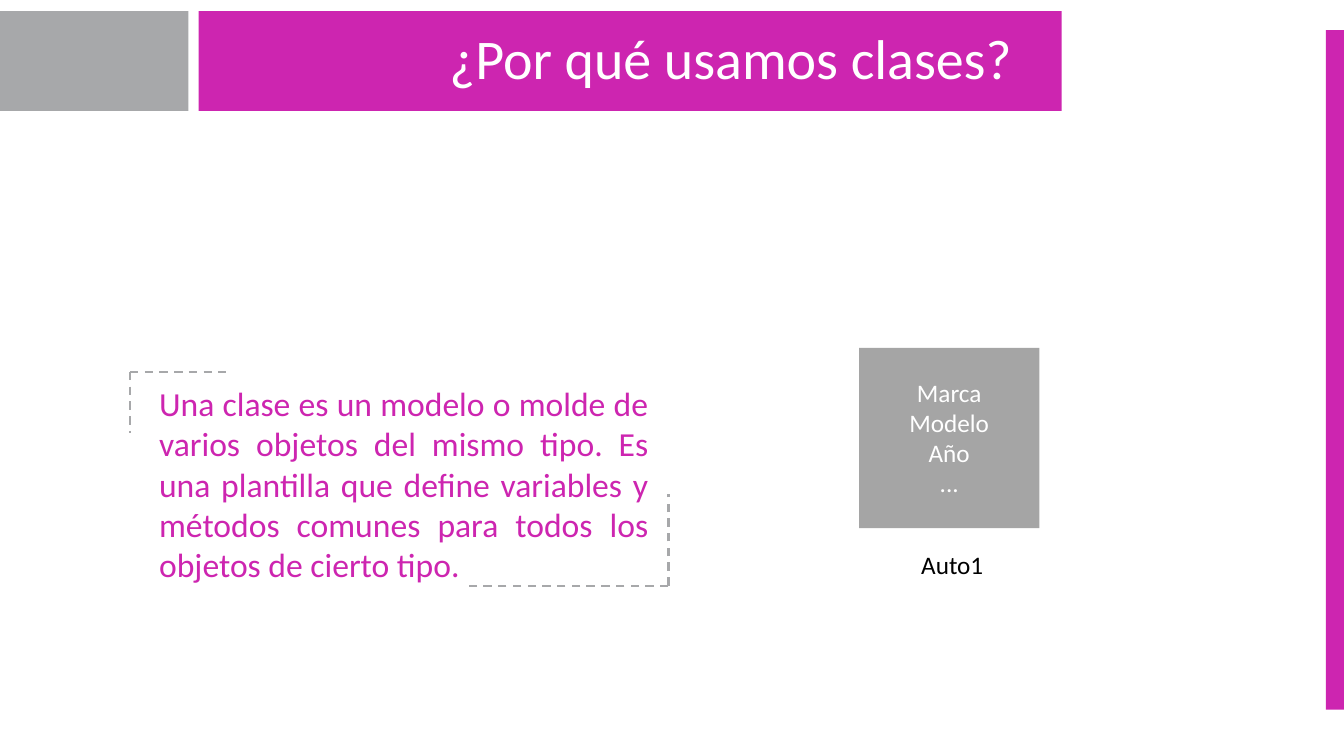
from pptx import Presentation
from pptx.dml.color import RGBColor
from pptx.enum.dml import MSO_LINE
from pptx.enum.shapes import MSO_CONNECTOR, MSO_SHAPE
from pptx.enum.text import MSO_ANCHOR as Anchor, MSO_AUTO_SIZE as Auto, PP_ALIGN as Align
from pptx.oxml.ns import qn
from pptx.util import Inches, Pt

PINK = RGBColor(0xCD, 0x25, 0xB0)
GREY = RGBColor(0xA7, 0xA8, 0xAA)
CARD = RGBColor(0xA5, 0xA5, 0xA5)
WHITE = RGBColor(0xFF, 0xFF, 0xFF)
BLACK = RGBColor(0x00, 0x00, 0x00)

BODY = ("Una clase es un modelo o molde de varios objetos del mismo tipo. "
        "Es una plantilla que define variables y métodos comunes para todos "
        "los objetos de cierto tipo.")


def add_bar(slide, box, color):
    bar = slide.shapes.add_shape(MSO_SHAPE.RECTANGLE, *map(Inches, box))
    bar.shadow.inherit = False
    bar.fill.solid()
    bar.fill.fore_color.rgb = color
    bar.line.fill.background()


def add_dash(slide, start, end):
    ends = map(Inches, (*start, *end))
    dash = slide.shapes.add_connector(MSO_CONNECTOR.STRAIGHT, *ends)
    dash.line.color.rgb = GREY
    dash.line.width = Pt(1.5)
    dash.line.dash_style = MSO_LINE.DASH
    props = dash.element.spPr
    props.append(props.makeelement(qn("a:effectLst"), {}))


def add_corner(slide, x, y, wide, high):
    """Draw two dashed lines from (x, y); negative lengths go left and up."""
    add_dash(slide, (x, y), (x, y + high))
    add_dash(slide, (x, y), (x + wide, y))


def set_text(frame, text, size, color, align, anchor=Anchor.TOP, pad=0.05):
    look = {
        "word_wrap": True, "auto_size": Auto.NONE, "vertical_anchor": anchor,
        "margin_left": Inches(0.1), "margin_right": Inches(0.1),
        "margin_top": Inches(pad), "margin_bottom": Inches(pad),
    }
    for name, value in look.items():
        setattr(frame, name, value)
    frame.text = text
    for para in frame.paragraphs:
        para.alignment = align
        font = para.runs[0].font
        font.name, font.size = "Calibri", Pt(size)
        font.color.rgb = color


def add_text(slide, box, *args, **opts):
    frame = slide.shapes.add_textbox(*map(Inches, box)).text_frame
    set_text(frame, *args, **opts)
    return frame


def add_title(slide, box, text):
    title = slide.shapes.title
    for name, value in zip(("left", "top", "width", "height"), box):
        setattr(title, name, Inches(value))
    set_text(title.text_frame, text, 40, WHITE, Align.RIGHT, Anchor.MIDDLE)
    title.text_frame.paragraphs[0].line_spacing = 0.9
    slide.shapes.element.append(title.element)  # in front of its bar


def main():
    deck = Presentation()
    deck.slide_width, deck.slide_height = Inches(13.33), Inches(7.5)
    slide = deck.slides.add_slide(deck.slide_layouts[5])

    add_bar(slide, (13.15, 0.3, 0.18, 6.74), PINK)
    add_bar(slide, (1.97, 0.11, 8.56, 0.99), PINK)
    add_title(slide, (2.16, 0.33, 8.1, 0.55), "¿Por qué usamos clases? ")
    add_bar(slide, (0, 0.11, 1.87, 0.99), GREY)

    body = add_text(slide, (1.36, 3.75, 5.17, 2.52), BODY, 24, PINK, Align.JUSTIFY)
    body.paragraphs[0]._p.get_or_add_pPr().set("marL", str(Inches(0.12)))
    add_corner(slide, 1.29, 3.69, 0.95, 0.61)
    add_corner(slide, 6.63, 5.81, -2, -0.91)

    add_bar(slide, (8.52, 3.45, 1.79, 1.79), CARD)
    add_text(slide, (8.68, 3.69, 1.47, 1.31), "Marca\nModelo\nAño\n...",
             18, WHITE, Align.CENTER)
    add_text(slide, (8.58, 5.35, 1.73, 0.47), "Auto1", 18, BLACK, Align.CENTER, pad=0.1)

    deck.save("out.pptx")


if __name__ == "__main__":
    main()
